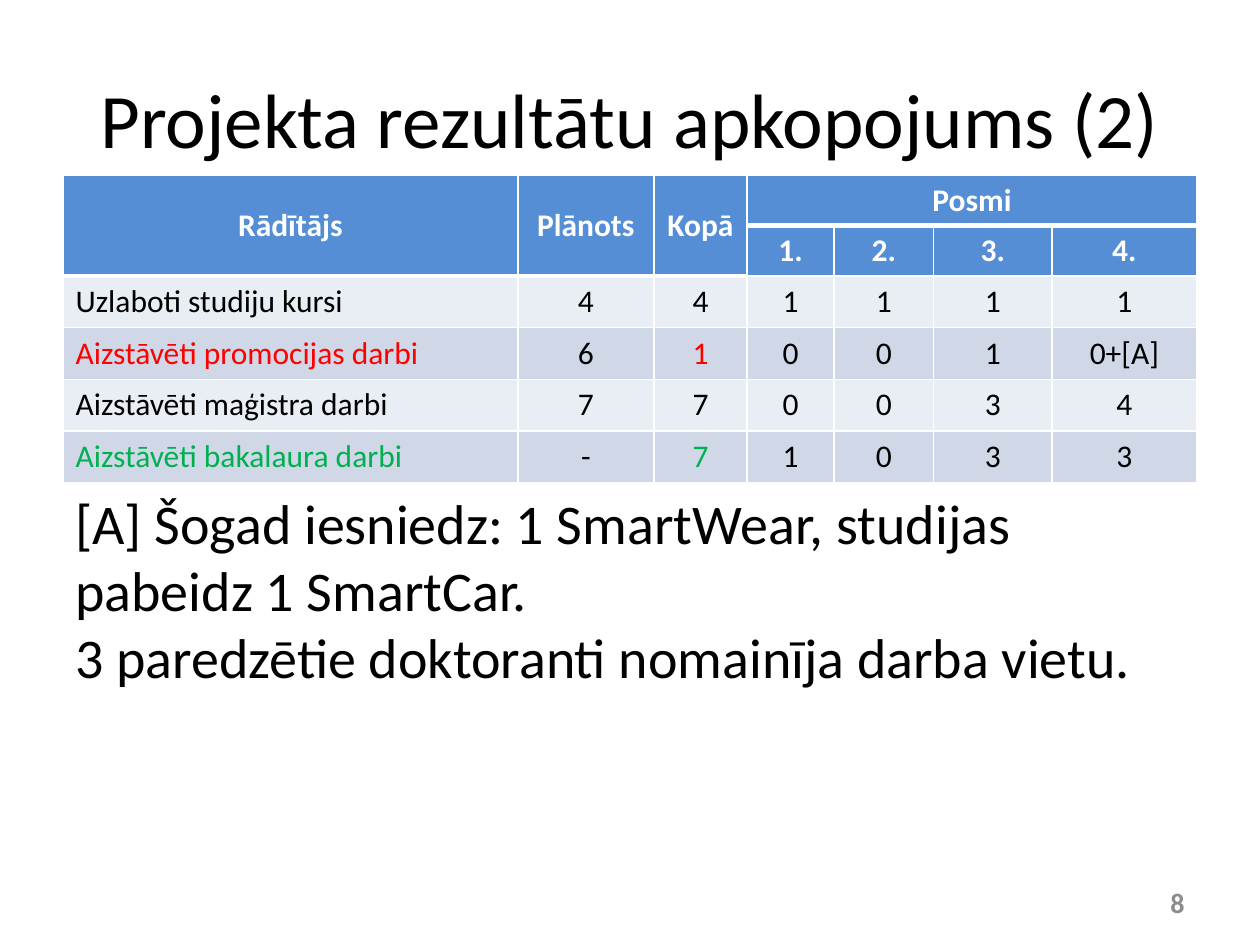
from lxml import etree
from pptx import Presentation
from pptx import util as u
from pptx.dml.color import RGBColor
from pptx.enum import text
from pptx.oxml.ns import qn

WIDTH, HEIGHT = u.Inches(10), u.Inches(7.5)
MARGIN, CONTENT = 0.05, 0.9
FONT = "Calibri"
COLORS = {
    "ink": "000000", "white": "FFFFFF", "header": "558ED5",
    "light": "E9EDF4", "dark": "D0D8E8",
    "behind": "FF0000", "ahead": "00B050", "number": "8C8C8C",
}
COLUMN_WIDTHS = [3.61, 1.08, 0.74, 0.69, 0.79, 0.94, 1.15]
ROW_HEIGHTS = [0.39] * 2 + [0.41] * 4
HEADERS = [
    ["Rādītājs", "Plānots", "Kopā", "Posmi", "", "", ""],
    ["", "", "", "1.", "2.", "3.", "4."],
]
RESULTS = [
    (["Uzlaboti studiju kursi", "4", "4", "1", "1", "1", "1"], "ink"),
    (["Aizstāvēti promocijas darbi", "6", "1", "0", "0", "1", "0+[A]"], "behind"),
    (["Aizstāvēti maģistra darbi", "7", "7", "0", "0", "3", "4"], "ink"),
    (["Aizstāvēti bakalaura darbi", "-", "7", "1", "0", "3", "3"], "ahead"),
]
STATUS_COLUMNS = (0, 2)


def rgb(name):
    """Return the named colour."""
    return RGBColor.from_string(COLORS[name])


def write(frame, content, size, color="ink", bold=False, align=text.PP_ALIGN.LEFT):
    """Fill a text frame and format all its runs."""
    frame.text = content
    for para in frame.paragraphs:
        para.alignment = align
        for span in para.runs:
            span.font.name = FONT
            span.font.size = u.Pt(size)
            span.font.bold = bold
            span.font.color.rgb = rgb(color)


def add_text(page, left, top, width, height, content, size,
             anchor=text.MSO_ANCHOR.MIDDLE, **style):
    """Add a wrapping text box placed by shares of the slide."""
    box = page.shapes.add_textbox(int(WIDTH * left), int(HEIGHT * top),
                                  int(WIDTH * width), int(HEIGHT * height))
    box.text_frame.word_wrap = True
    box.text_frame.vertical_anchor = anchor
    write(box.text_frame, content, size, **style)


def set_borders(cell, bottom):
    """Draw white lines on the four sides of a cell."""
    properties = cell._tc.get_or_add_tcPr()
    sides = {"a:lnL": 1, "a:lnR": 1, "a:lnT": 1, "a:lnB": bottom}
    for index, (tag, points) in enumerate(sides.items()):
        line = etree.Element(qn(tag), w=str(u.Pt(points)))
        fill = etree.SubElement(line, qn("a:solidFill"))
        etree.SubElement(fill, qn("a:srgbClr"), val=COLORS["white"])
        properties.insert(index, line)


def style_cell(cell, content, fill, bottom=1, **style):
    """Write a table cell with its fill and borders."""
    write(cell.text_frame, content, 18, **style)
    cell.fill.solid()
    cell.fill.fore_color.rgb = rgb(fill)
    set_borders(cell, bottom)


def add_results_table(page):
    """Add the table of indicators by project stage."""
    table = page.shapes.add_table(
        len(ROW_HEIGHTS), len(COLUMN_WIDTHS), int(WIDTH * MARGIN), u.Inches(1.39),
        u.Inches(sum(COLUMN_WIDTHS)), u.Inches(sum(ROW_HEIGHTS))).table
    for column, width in zip(table.columns, COLUMN_WIDTHS):
        column.width = u.Inches(width)
    for row, height in zip(table.rows, ROW_HEIGHTS):
        row.height = u.Inches(height)
    for r, labels in enumerate(HEADERS):
        for c, label in enumerate(labels):
            cell = table.cell(r, c)
            style_cell(cell, label, "header", bottom=1 if r else 3, color="white",
                       bold=True, align=text.PP_ALIGN.CENTER)
            cell.vertical_anchor = text.MSO_ANCHOR.MIDDLE
    for c in range(3):
        table.cell(0, c).merge(table.cell(1, c))
    table.cell(0, 3).merge(table.cell(0, 6))
    for r, (values, status) in enumerate(RESULTS):
        for c, value in enumerate(values):
            style_cell(table.cell(r + len(HEADERS), c), value,
                       "dark" if r % 2 else "light",
                       color=status if c in STATUS_COLUMNS else "ink",
                       align=text.PP_ALIGN.CENTER if c else text.PP_ALIGN.LEFT)


def main():
    """Build the project results slide."""
    deck = Presentation()
    deck.slide_width, deck.slide_height = WIDTH, HEIGHT
    page = deck.slides.add_slide(deck.slide_layouts[6])
    add_text(page, MARGIN, 0.04, CONTENT, 0.17, "Projekta rezultātu apkopojums (2)",
             44, align=text.PP_ALIGN.CENTER)
    add_results_table(page)
    add_text(page, 0.72, 0.93, 0.23, 0.05, "8", 16, color="number", bold=True,
             align=text.PP_ALIGN.RIGHT)
    add_text(page, MARGIN, 0.51, CONTENT, 0.39,
             "[A] Šogad iesniedz: 1 SmartWear, studijas pabeidz 1 SmartCar.\v"
             "3 paredzētie doktoranti nomainīja darba vietu.",
             32, anchor=text.MSO_ANCHOR.TOP)
    deck.save("out.pptx")


if __name__ == "__main__":
    main()
